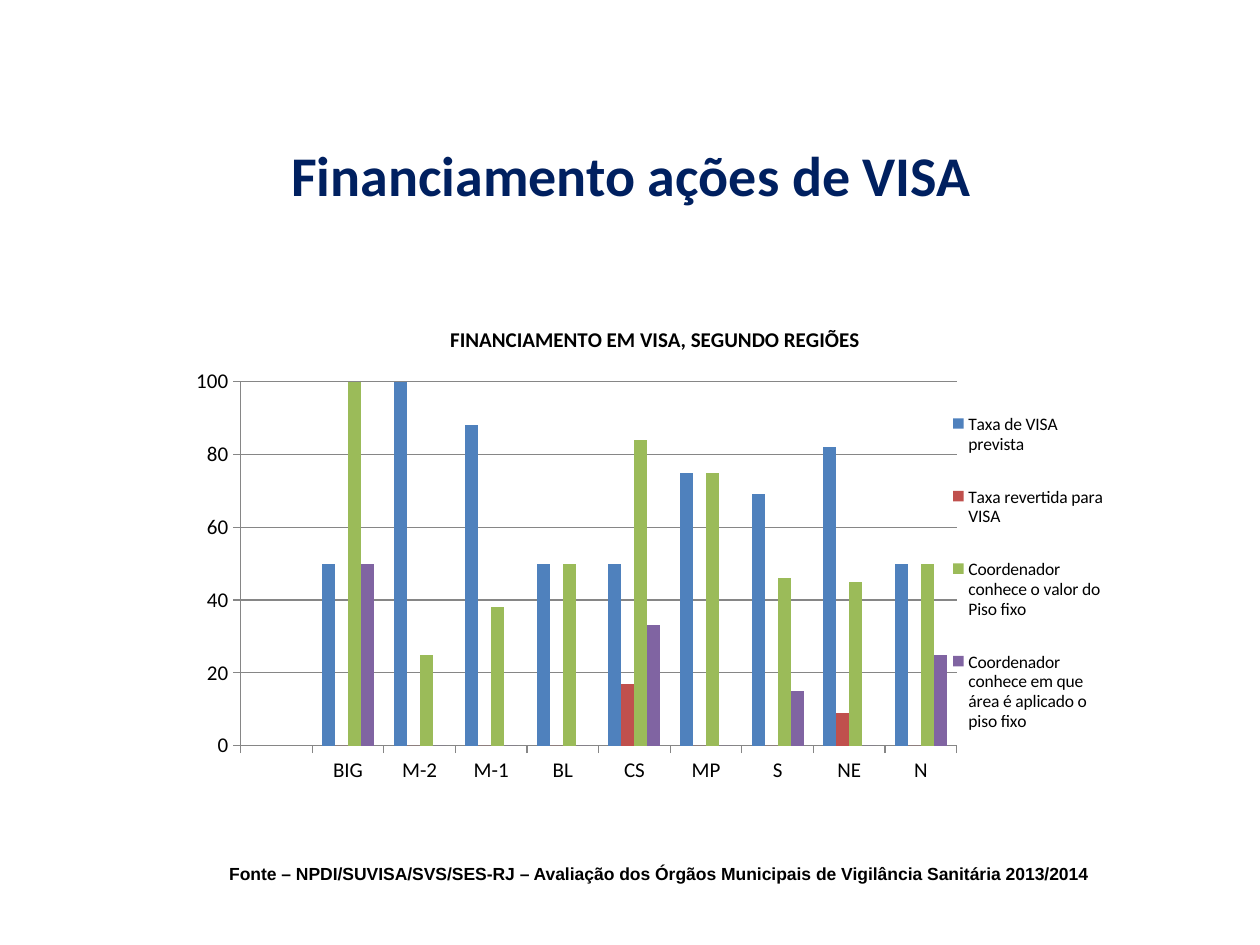
import pptx
import pptx.util
import pptx.dml.color
import pptx.chart.data
import pptx.enum.chart
import pptx.enum.text
import pptx.oxml
import pptx.oxml.ns

Cm = pptx.util.Cm
Pt = pptx.util.Pt

REGIONS = ["", "BIG", "M-2", "M-1", "BL", "CS", "MP", "S", "NE", "N"]
SERIES = [
    ("Taxa de VISA prevista", "4F81BD",
     [None, 50, 100, 88, 50, 50, 75, 69, 82, 50]),
    ("Taxa revertida para VISA", "C0504D",
     [None, 0, 0, 0, 0, 17, 0, 0, 9, 0]),
    ("Coordenador conhece o valor do Piso fixo", "9BBB59",
     [None, 100, 25, 38, 50, 84, 75, 46, 45, 50]),
    ("Coordenador conhece em que área é aplicado o piso fixo", "8064A2",
     [None, 50, 0, 0, 0, 33, 0, 15, 0, 25]),
]


def paint(color, code):
    color.rgb = pptx.dml.color.RGBColor.from_string(code)


def style(font, size, code="000000", name="Calibri", bold=False):
    font.name, font.size, font.bold = name, Pt(size), bold
    paint(font.color, code)


def set_box(shape, box):
    shape.left, shape.top, shape.width, shape.height = map(Cm, box)


def arrange(parent, index, percents, inner=False):
    for old in parent.findall(pptx.oxml.ns.qn("c:layout")):
        parent.remove(old)
    target = '<c:layoutTarget val="inner"/>' if inner else ""
    modes = "".join(f'<c:{k}Mode val="edge"/>' for k in "xy")
    sizes = "".join(f'<c:{k} val="{v / 100:.4f}"/>'
                    for k, v in zip("xywh", percents))
    parent.insert(index, pptx.oxml.parse_xml(
        f'<c:layout {pptx.oxml.ns.nsdecls("c")}><c:manualLayout>'
        f'{target}{modes}{sizes}</c:manualLayout></c:layout>'))


def add_title(slide, box):
    title = slide.shapes.title
    set_box(title, box)
    frame = title.text_frame
    frame.text = "Financiamento ações de VISA"
    frame.vertical_anchor = pptx.enum.text.MSO_ANCHOR.MIDDLE
    line = frame.paragraphs[0]
    line.alignment = pptx.enum.text.PP_ALIGN.CENTER
    style(line.font, 32, "002060", bold=True)


def add_graph(slide, box):
    data = pptx.chart.data.CategoryChartData()
    data.categories = REGIONS
    for name, code, values in SERIES:
        data.add_series(name, values)
    kind = pptx.enum.chart.XL_CHART_TYPE.COLUMN_CLUSTERED
    chart = slide.shapes.add_chart(kind, *map(Cm, box), data).chart
    style(chart.font, 10)

    frame = chart.chart_title.text_frame
    frame.text = "FINANCIAMENTO EM VISA, SEGUNDO REGIÕES"
    style(frame.paragraphs[0].font, 12, bold=True)

    plot = chart.plots[0]
    plot.gap_width = 150
    plot.vary_by_categories = False
    for series, (name, code, values) in zip(plot.series, SERIES):
        series.format.fill.solid()
        paint(series.format.fill.fore_color, code)
        series.invert_if_negative = False

    for axis in (chart.category_axis, chart.value_axis):
        style(axis.tick_labels.font, 12)
        axis.major_tick_mark = pptx.enum.chart.XL_TICK_MARK.OUTSIDE
        axis.format.line.width = Pt(0.75)
        paint(axis.format.line.color, "868686")
    scale = chart.value_axis
    scale.minimum_scale, scale.maximum_scale, scale.major_unit = 0, 100, 20
    scale.has_major_gridlines = True
    grid = scale.major_gridlines.format.line
    grid.width = Pt(0.75)
    paint(grid.color, "868686")

    chart.has_legend = True
    legend = chart.legend
    legend.position = pptx.enum.chart.XL_LEGEND_POSITION.RIGHT
    legend.include_in_layout = False
    style(legend.font, 10)

    area = chart.element.find(".//" + pptx.oxml.ns.qn("c:plotArea"))
    key = chart.element.find(".//" + pptx.oxml.ns.qn("c:legend"))
    arrange(area, 0, (6.6, 15.7, 75, 74.7), inner=True)
    arrange(key, 1, (81.2, 15.7, 15.7, 78.5))


def add_source(slide, box):
    note = slide.shapes.add_textbox(*map(Cm, box))
    frame = note.text_frame
    frame.word_wrap = False
    frame.auto_size = pptx.enum.text.MSO_AUTO_SIZE.SHAPE_TO_FIT_TEXT
    line = frame.paragraphs[0]
    line.text = ("Fonte – NPDI/SUVISA/SVS/SES-RJ – Avaliação dos Órgãos "
                 "Municipais de Vigilância Sanitária 2013/2014")
    line.alignment = pptx.enum.text.PP_ALIGN.JUSTIFY
    style(line.font, 10, name="Arial", bold=True)


def main():
    deck = pptx.Presentation()
    deck.slide_width, deck.slide_height = Cm(25.4), Cm(19.05)
    slide = deck.slides.add_slide(deck.slide_layouts[5])
    add_title(slide, (1.3, 1.93, 22.86, 3.18))
    add_graph(slide, (3.58, 6.15, 19.25, 9.83))
    add_source(slide, (4.37, 17.27, 18.01, 0.69))
    deck.save("out.pptx")


if __name__ == "__main__":
    main()
